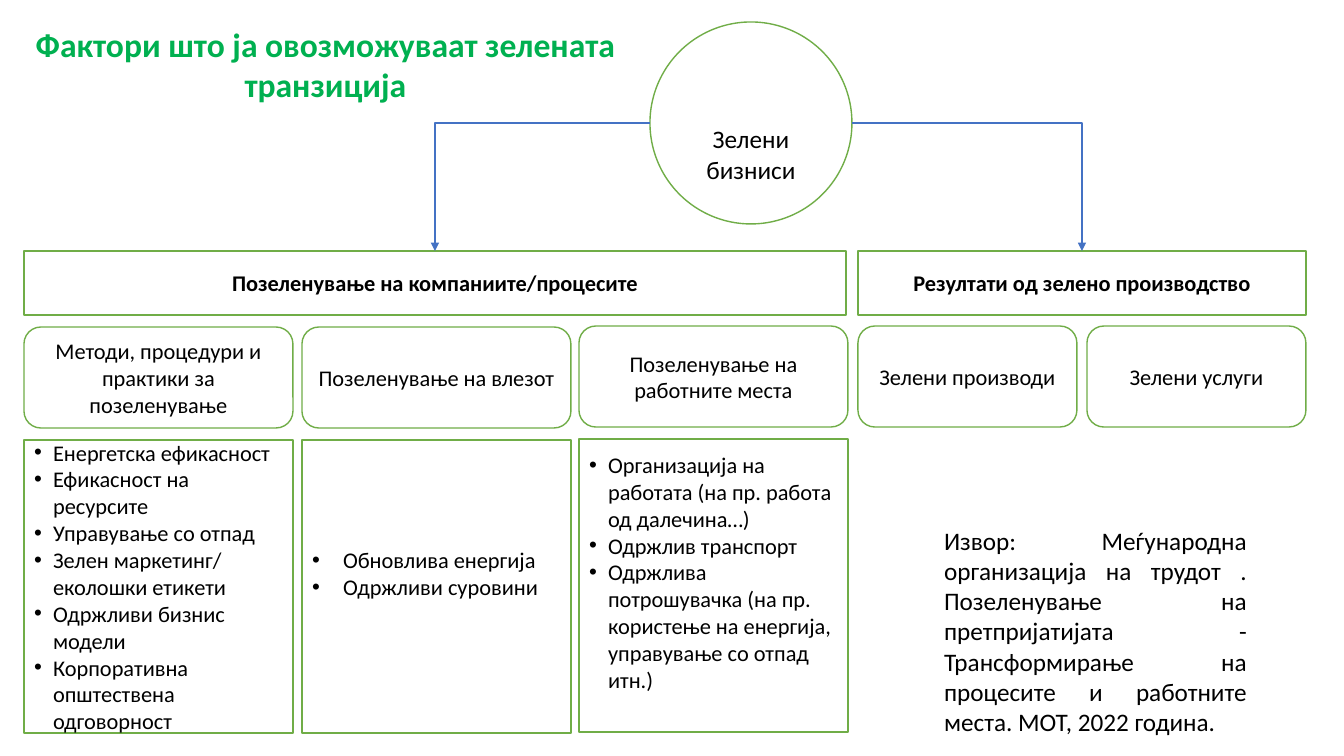
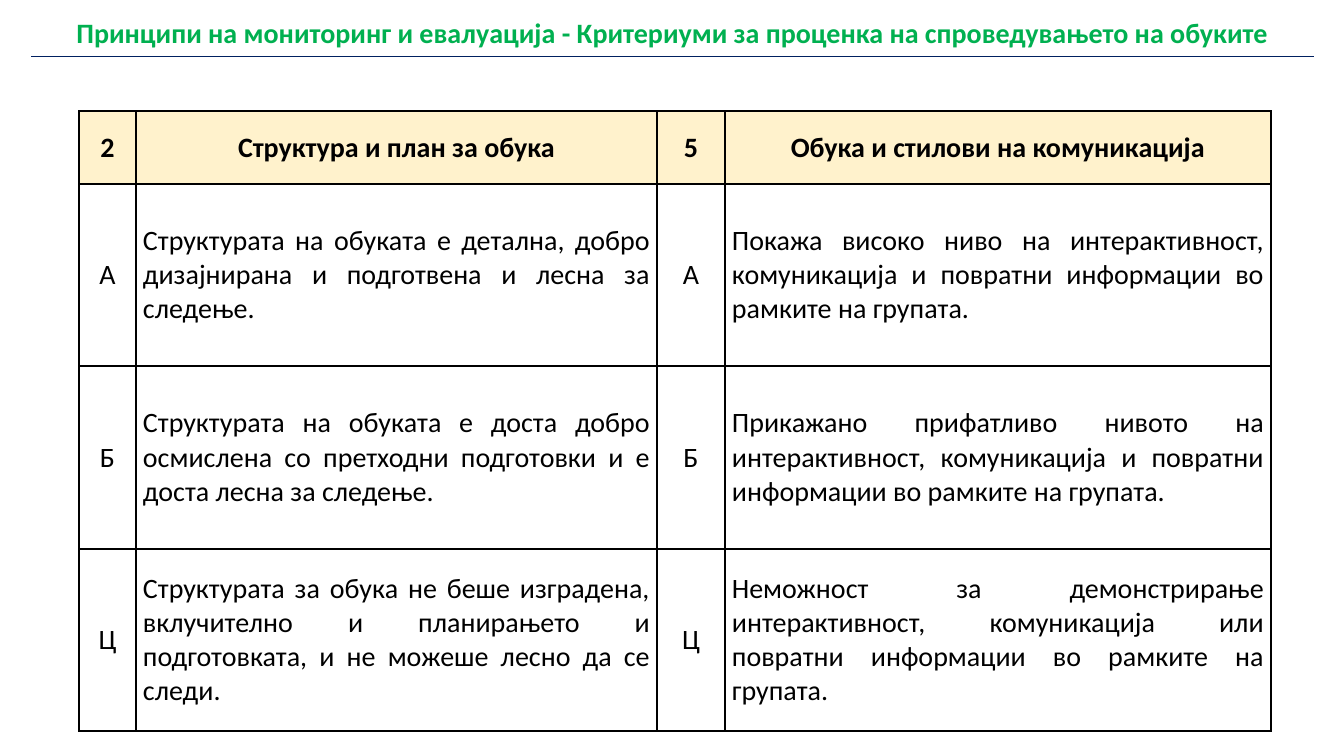
from pptx import Presentation
from pptx.dml.color import RGBColor
from pptx.enum.shapes import MSO_CONNECTOR as Wire, MSO_SHAPE as Form
from pptx.enum.text import MSO_ANCHOR as Anchor, MSO_AUTO_SIZE as Fit, PP_ALIGN as Align
from pptx.oxml.ns import qn
from pptx.util import Emu, Pt
from lxml.etree import SubElement as Sub

FONT = "Calibri"
HUES = {"title": "00B050", "edge": "70AD47", "arrow": "4472C4", "rule": "002060",
        "head": "FFF2CC", "text": "000000", "paper": "FFFFFF"}

TITLE = "Фактори што ја овозможуваат зелената транзиција"
HUB = "Зелени бизниси"
GROUPS = [
    {"head": "Позеленување на компаниите/процесите", "left": 24, "span": 822, "wide": 269,
     "kids": [("Методи, процедури и практики за позеленување", 24, 327),
              ("Позеленување на влезот", 302, 327),
              ("Позеленување на работните места", 579, 326)]},
    {"head": "Резултати од зелено производство", "left": 858, "span": 448, "wide": 219,
     "kids": [("Зелени производи", 858, 326), ("Зелени услуги", 1087, 326)]},
]
LISTS = [
    {"items": ["Енергетска ефикасност", "Ефикасност на ресурсите", "Управување со отпад",
               "Зелен маркетинг/ еколошки етикети", "Одржливи бизнис модели",
               "Корпоративна општествена одговорност"],
     "hang": 19, "foot": 5, "align": Align.LEFT},
    {"items": ["Обновлива енергија", "Одржливи суровини"],
     "hang": 31, "foot": 32, "align": Align.JUSTIFY},
    {"items": ["Организација на работата (на пр. работа од далечина…)", "Одржлив транспорт",
               "Одржлива потрошувачка (на пр. користење на енергија, управување со отпад итн.)"],
     "hang": 19, "foot": 32, "align": Align.LEFT},
]
SOURCE = ("Извор: Меѓународна организација на трудот . Позеленување на претпријатијата - "
          "Трансформирање на процесите и работните места. МОТ, 2022 година.")

BANNER = [["Принципи на мониторинг и евалуација - Критериуми за проценка на спроведувањето на обуките"]]
COLS = [57, 521, 68, 546]
ROWS = [73, 182, 183, 182]
CELLS = [
    ["2", "Структура и план за обука", "5", "Обука и стилови на комуникација"],
    ["А", "Структурата на обуката е детална, добро дизајнирана и подготвена и лесна за следење.",
     "А", "Покажа високо ниво на интерактивност, комуникација и повратни информации во рамките на групата."],
    ["Б", "Структурата на обуката е доста добро осмислена со претходни подготовки и е доста лесна за следење.",
     "Б", "Прикажано прифатливо нивото на интерактивност, комуникација и повратни информации во рамките на групата."],
    ["Ц", "Структурата за обука не беше изградена, вклучително и планирањето и подготовката, "
          "и не можеше лесно да се следи.",
     "Ц", "Неможност за демонстрирање интерактивност, комуникација или повратни информации "
          "во рамките на групата."],
]


def px(n):
    return Emu(round(n * 914400 / 100.8))


def hue(name):
    return RGBColor.from_string(HUES[name])


def write(frame, lines, size, bold=False, align=Align.CENTER, color="text"):
    frame.text = "\n".join(lines)
    for para in frame.paragraphs:
        para.alignment = align
        para.line_spacing = 1.0
        para.space_before = para.space_after = Pt(0)
        for run in para.runs:
            font = run.font
            font.name, font.size, font.bold = FONT, Pt(size), bold
            font.color.rgb = hue(color)


def bullet(frame, hang):
    for para in frame.paragraphs:
        props = para._p.get_or_add_pPr()
        props.set("marL", str(px(hang)))
        props.set("indent", str(-px(hang)))
        if hang:
            Sub(props, qn("a:buFont")).set("typeface", "Arial")
            Sub(props, qn("a:buChar")).set("char", "•")
        else:
            Sub(props, qn("a:buNone"))


def outline(shape):
    shape.fill.solid()
    shape.fill.fore_color.rgb = hue("paper")
    shape.line.color.rgb = hue("edge")
    shape.line.width = Pt(1)


def settle(shape, box, anchor):
    shape.left, shape.top, shape.width, shape.height = map(px, box)
    frame = shape.text_frame
    frame.auto_size, frame.vertical_anchor = Fit.NONE, anchor
    return frame


def node(slide, form, box, text, size=16, bold=False):
    shape = slide.shapes.add_shape(form, *map(px, box))
    shape.shadow.inherit = False
    outline(shape)
    shape.text_frame.vertical_anchor = Anchor.MIDDLE
    write(shape.text_frame, [text], size, bold)
    return shape


def arrow(slide, ends):
    line = slide.shapes.add_connector(Wire.ELBOW, *map(px, ends))
    line.line.color.rgb = hue("arrow")
    line.line.width = Pt(1)
    props = line._element.spPr
    props.find(qn("a:prstGeom")).set("prst", "bentConnector2")
    Sub(props.find(qn("a:ln")), qn("a:tailEnd")).set("type", "triangle")
    Sub(props, qn("a:effectLst"))


def body(shape, box, lines, size, align, anchor, hang=0, foot=5):
    frame = settle(shape, box, anchor)
    frame.margin_bottom = px(foot)
    write(frame, lines, size, align=align)
    bullet(frame, hang)


def border(cell, colors):
    props = cell._tc.get_or_add_tcPr()
    for side, color in zip("LRTB", colors):
        edge = Sub(props, qn("a:ln" + side))
        edge.set("w", str(Pt(1)))
        Sub(Sub(edge, qn("a:solidFill")), qn("a:srgbClr")).set("val", HUES[color])


def grid(slide, left, top, cols, rows, colors):
    table = slide.shapes.add_table(len(rows), len(cols), px(left), px(top),
                                   px(sum(cols)), px(sum(rows))).table
    table.first_row = table.horz_banding = False
    for col, wide in zip(table.columns, cols):
        col.width = px(wide)
    for row, high in zip(table.rows, rows):
        row.height = px(high)
    for cell in table.iter_cells():
        border(cell, colors)
        cell.fill.background()
    return table


def chart_slide(slide):
    write(settle(slide.shapes.title, (10, 18, 631, 92), Anchor.MIDDLE), [TITLE], 24, True, color="title")
    hub = node(slide, Form.OVAL, (650, 22, 202, 202), HUB, 18)
    hub.text_frame.margin_top = px(67)
    for group, start in zip(GROUPS, (650, 852)):
        left, span = group["left"], group["span"]
        node(slide, Form.FLOWCHART_PROCESS, (left, 251, span, 64), group["head"], bold=True)
        arrow(slide, (start, 123, left + span / 2, 251))
        for kid, x, y in group["kids"]:
            node(slide, Form.ROUNDED_RECTANGLE, (x, y, group["wide"], 101), kid)
    holders = [s for s in slide.placeholders if s.placeholder_format.idx]
    first = GROUPS[0]
    for shape, part, (_, x, y) in zip(holders, LISTS, first["kids"]):
        body(shape, (x, y + 113, first["wide"], 293), part["items"], 16,
             part["align"], Anchor.MIDDLE, part["hang"], part["foot"])
        outline(shape)
    body(holders[-1], (934, 520, 323, 222), [SOURCE], 18, Align.JUSTIFY, Anchor.TOP)


def table_slide(slide):
    banner = grid(slide, 30, 12, [1285], [43], ["paper"] * 3 + ["rule"])
    write(banner.cell(0, 0).text_frame, BANNER[0], 20, True, color="title")
    table = grid(slide, 79, 111, COLS, ROWS, ["text"] * 4)
    for r, texts in enumerate(CELLS):
        for c, text in enumerate(texts):
            cell = table.cell(r, c)
            cell.vertical_anchor = Anchor.MIDDLE
            cell.margin_left = cell.margin_right = px(7)
            cell.margin_top = cell.margin_bottom = 0
            if not r:
                cell.fill.solid()
                cell.fill.fore_color.rgb = hue("head")
            write(cell.text_frame, [text], 20, not r,
                  Align.JUSTIFY if r and c % 2 else Align.CENTER)


def main():
    deck = Presentation()
    deck.slide_width, deck.slide_height = px(1344), px(756)
    for layout, build in ((4, chart_slide), (6, table_slide)):
        build(deck.slides.add_slide(deck.slide_layouts[layout]))
    deck.save("out.pptx")


if __name__ == "__main__":
    main()
